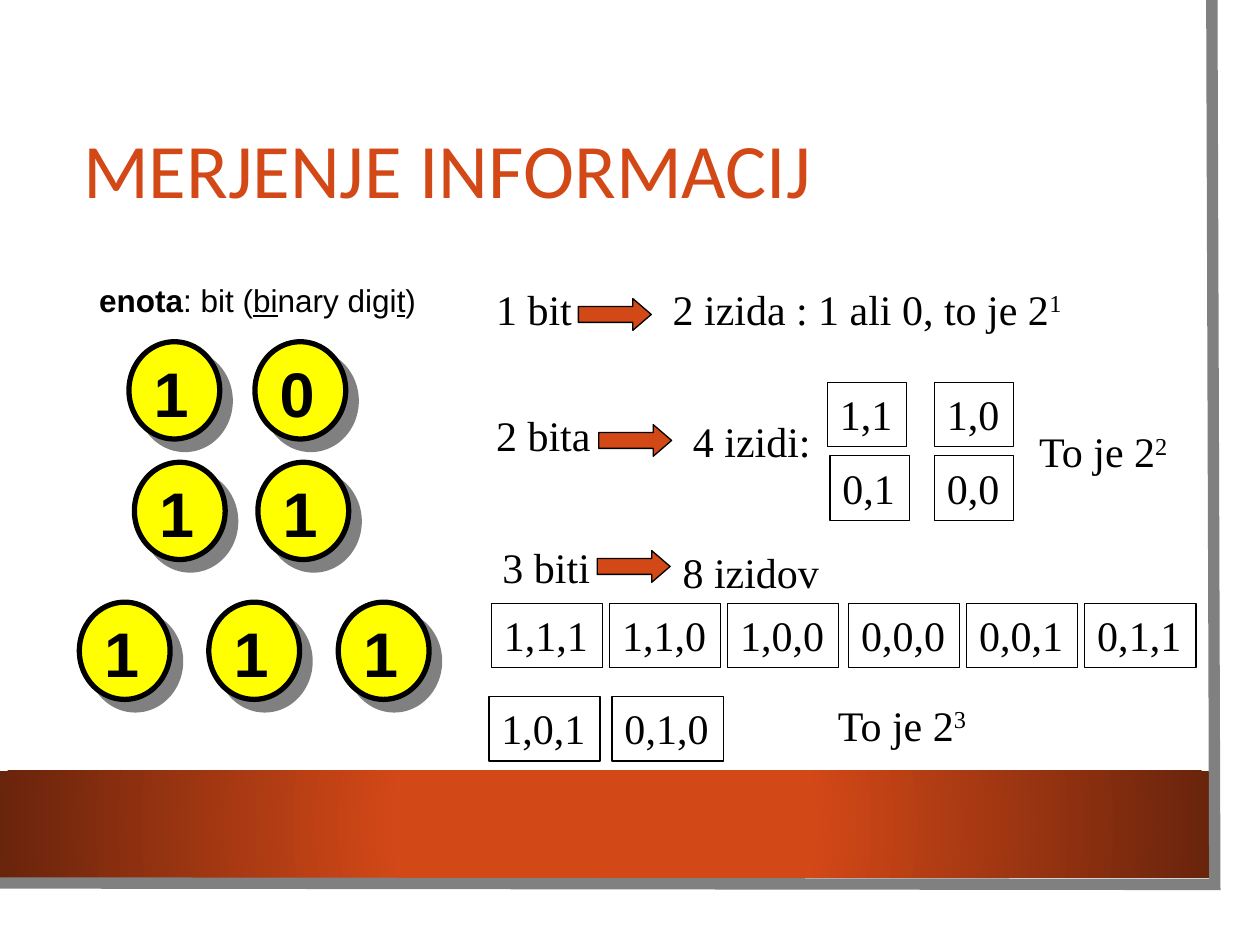
from lxml.etree import SubElement
from pptx import Presentation
from pptx.dml.color import RGBColor
from pptx.enum.shapes import MSO_SHAPE
from pptx.enum.text import MSO_ANCHOR, MSO_AUTO_SIZE, PP_ALIGN
from pptx.oxml import parse_xml
from pptx.oxml.ns import nsdecls, qn
from pptx.util import Cm, Pt

ORANGE = "D34817"
BLACK = "000000"


def paint(shape, fill=None, line=None, width=0.75):
    shape.shadow.inherit = False
    if fill:
        shape.fill.solid()
        shape.fill.fore_color.rgb = RGBColor.from_string(fill)
    else:
        shape.fill.background()
    if line:
        shape.line.color.rgb = RGBColor.from_string(line)
        shape.line.width = Pt(width)
    else:
        shape.line.fill.background()


def write(shape, *parts, font="Times New Roman", size=24, color=BLACK, bold=None,
          wrap=False, anchor=MSO_ANCHOR.TOP):
    frame = shape.text_frame
    frame.word_wrap = wrap
    frame.auto_size = MSO_AUTO_SIZE.NONE if wrap else MSO_AUTO_SIZE.SHAPE_TO_FIT_TEXT
    frame.vertical_anchor = anchor
    paragraph = frame.paragraphs[0]
    paragraph.alignment = PP_ALIGN.LEFT
    for text, style in parts:
        run = paragraph.add_run()
        run.text = text
        run.font.name = font
        run.font.size = Pt(size)
        run.font.color.rgb = RGBColor.from_string(color)
        run.font.bold = True if style == "bold" else bold
        if style == "underline":
            run.font.underline = True
        if style == "superscript":
            run.font._element.set("baseline", "30000")


presentation = Presentation()
presentation.slide_width = Cm(25.4)
presentation.slide_height = Cm(19.05)
slide = presentation.slides.add_slide(presentation.slide_layouts[5])
shapes = slide.shapes

band = shapes.add_shape(MSO_SHAPE.RECTANGLE, 0, Cm(15.54), Cm(24.38), Cm(2.16))
paint(band)
band_properties = band._element.spPr
band_properties.replace(band_properties.find(qn("a:noFill")), parse_xml(
    f'<a:gradFill {nsdecls("a")} rotWithShape="1"><a:gsLst>'
    f'<a:gs pos="34000"><a:srgbClr val="{ORANGE}"/></a:gs>'
    '<a:gs pos="100000"><a:srgbClr val="69240C"/></a:gs></a:gsLst>'
    '<a:path path="circle"><a:fillToRect l="50000" t="50000" r="50000" b="50000"/>'
    '</a:path></a:gradFill>'))

builder = shapes.build_freeform(Cm(24.43), 0)
builder.add_line_segments([(Cm(24.49), Cm(17.83)), (Cm(-0.05), Cm(17.8))], close=False)
border = builder.convert_to_shape()
paint(border, line="808080", width=6.5)
SubElement(border._element.spPr.find(qn("a:ln")), qn("a:miter"), lim="800000")

title = shapes.title
title.left, title.top, title.width, title.height = Cm(1.42), Cm(1.9), Cm(21.67), Cm(3.2)
write(title, ("MERJENJE INFORMACIJ", None), font="Calibri", size=44, color=ORANGE,
      wrap=True, anchor=MSO_ANCHOR.MIDDLE)
title.text_frame.paragraphs[0].line_spacing = 0.9

unit = shapes.add_textbox(Cm(1.75), Cm(5.54), Cm(6.99), Cm(1.02))
write(unit, ("enota", "bold"), (": bit (", None), ("bi", "underline"),
      ("nary digi", None), ("t", "underline"), (")", None),
      font="Arial", size=18, wrap=True)

coin_rows = [(2.6, 6.89, 2.54, "10"), (2.71, 9.32, 2.49, "11"), (1.6, 12.14, 2.61, "111")]
for left, top, pitch, digits in coin_rows:
    for column, digit in enumerate(digits):
        x = left + column * pitch
        coin = shapes.add_shape(MSO_SHAPE.OVAL, Cm(x), Cm(top), Cm(1.83), Cm(1.96))
        paint(coin, "FFFF00", BLACK, 3)
        effects = coin._element.spPr.find(qn("a:effectLst"))
        shadow = SubElement(effects, qn("a:outerShdw"), dist=str(Pt(8.5)), dir="2700000",
                            algn="ctr", rotWithShape="0")
        SubElement(shadow, qn("a:srgbClr"), val="808080")
        label = shapes.add_textbox(Cm(x + 0.25), Cm(top + 0.13), Cm(1.17), Cm(1.57))
        write(label, (digit, None), font="Arial", size=36, bold=True, wrap=True)

for left, top in [(11.66, 6.02), (12.07, 8.56), (12.04, 11.1)]:
    arrow = shapes.add_shape(MSO_SHAPE.RIGHT_ARROW, Cm(left), Cm(top), Cm(1.47), Cm(0.64))
    arrow.adjustments[1] = 0.58
    paint(arrow, ORANGE, BLACK)

statements = [
    (9.75, 5.59, 2.54, "1 bit", "", True),
    (13.31, 5.59, 8.5, "2 izida : 1 ali 0, to je 2", "1", True),
    (9.75, 8.13, 2.54, "2 bita", "", True),
    (13.72, 8.26, 3.2, "4 izidi:", "", True),
    (20.7, 8.46, 3.4, "To je 2", "2", True),
    (9.88, 10.8, 2.5, "3 biti", "", True),
    (13.51, 10.9, 3.5, "8 izidov", "", True),
    (16.64, 13.97, 3.4, "To je 2", "3", True),
]
for left, top, width, text, power, wrap in statements:
    box = shapes.add_textbox(Cm(left), Cm(top), Cm(width), Cm(1.27))
    parts = [(text, None)] + ([(power, "superscript")] if power else [])
    write(box, *parts, wrap=wrap)

outcome_rows = [
    (16.68, 7.71, 1.6, 2.16, ["1,1", "1,0"]),
    (16.73, 9.19, 1.6, 2.11, ["0,1", "0,0"]),
    (9.91, 12.16, 2.24, 2.38, ["1,1,1", "1,1,0", "1,0,0"]),
    (17.11, 12.16, 2.24, 2.38, ["0,0,0", "0,0,1", "0,1,1"]),
    (9.86, 14.04, 2.24, 2.48, ["1,0,1", "0,1,0"]),
]
for left, top, width, pitch, outcomes in outcome_rows:
    for column, outcome in enumerate(outcomes):
        cell = shapes.add_shape(MSO_SHAPE.RECTANGLE, Cm(left + column * pitch), Cm(top),
                                Cm(width), Cm(1.3))
        paint(cell, line=BLACK)
        write(cell, (outcome, None))

presentation.save("out.pptx")
